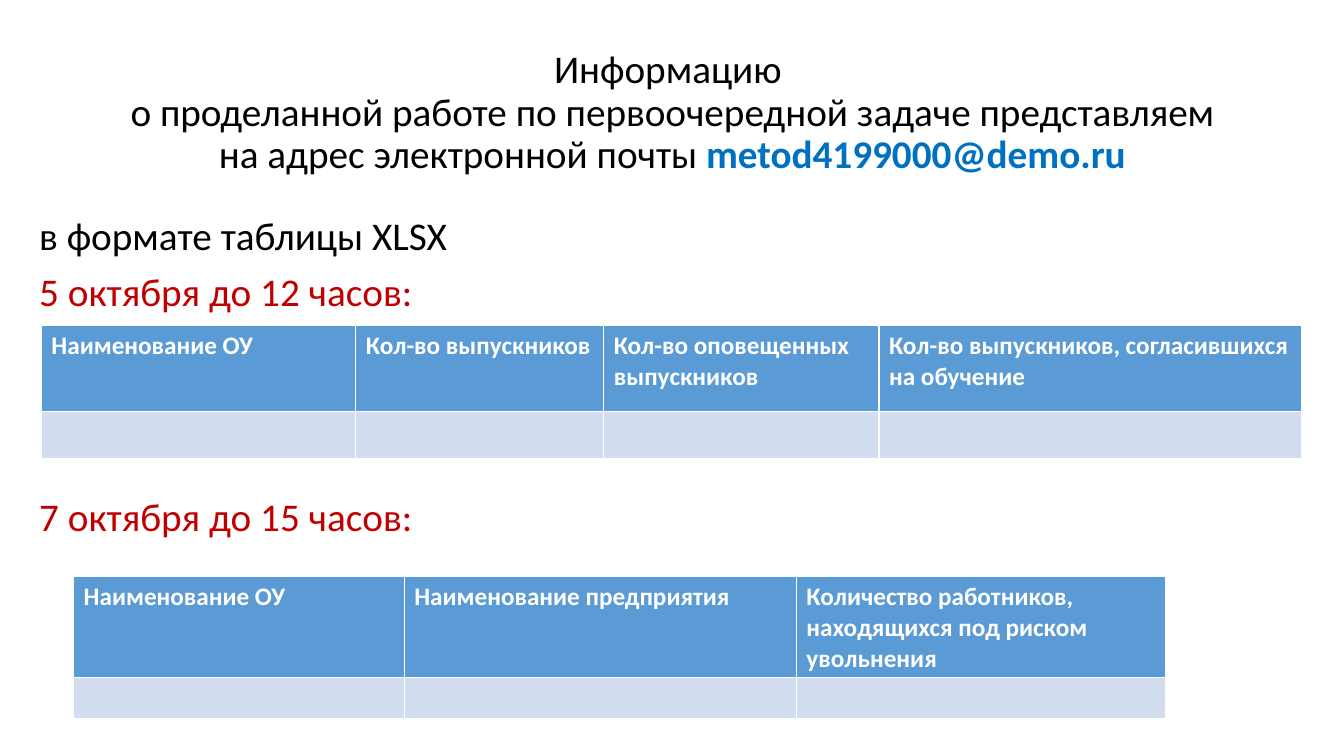
"""Build the slide on where and when to send the survey tables."""
from pptx import Presentation
from pptx.dml.color import RGBColor
from pptx.enum.text import MSO_ANCHOR, MSO_AUTO_SIZE, PP_ALIGN
from pptx.util import Inches, Pt

BLACK = RGBColor(0x00, 0x00, 0x00)
WHITE = RGBColor(0xFF, 0xFF, 0xFF)
RED = RGBColor(0xC0, 0x00, 0x00)
LINK_BLUE = RGBColor(0x00, 0x70, 0xC0)
HEADER_BLUE = RGBColor(0x5B, 0x9B, 0xD5)
ROW_BLUE = RGBColor(0xD2, 0xDE, 0xEF)

deck = Presentation()
deck.slide_width = Inches(13.33)
deck.slide_height = Inches(7.5)
COL = deck.slide_width / 100
ROW = deck.slide_height / 100


def place(left, top, width, height):
    """Turn percentages of the slide into lengths."""
    return int(left * COL), int(top * ROW), int(width * COL), int(height * ROW)


def write(paragraph, text, size=28, color=BLACK, bold=False):
    """Add a formatted run to a paragraph."""
    run = paragraph.add_run()
    run.text = text
    run.font.name = "Calibri"
    run.font.size = Pt(size)
    run.font.bold = bold
    run.font.color.rgb = color


slide = deck.slides.add_slide(deck.slide_layouts[5])

title = slide.shapes.title
title.left, title.top, title.width, title.height = place(6.9, 5.33, 86.25, 19.33)
title.text_frame.auto_size = MSO_AUTO_SIZE.NONE
title.text_frame.vertical_anchor = MSO_ANCHOR.MIDDLE
heading = title.text_frame.paragraphs[0]
heading.alignment = PP_ALIGN.CENTER
heading.line_spacing = 0.9
for line in ("Информацию ", "о проделанной работе по первоочередной задаче представляем"):
    write(heading, line)
    heading.add_line_break()
write(heading, "на адрес электронной почты ")
write(heading, "metod4199000@demo.ru", color=LINK_BLUE, bold=True)

deadlines = [
    (28, 14, [("в формате таблицы XLSX", BLACK), ("5 октября до 12 часов:", RED)]),
    (65.2, 7, [("7 октября до 15 часов:", RED)]),
]
for top, height, lines in deadlines:
    frame = slide.shapes.add_textbox(*place(2.18, top, 88.8, height)).text_frame
    frame.word_wrap = True
    for index, (line, color) in enumerate(lines):
        paragraph = frame.add_paragraph() if index else frame.paragraphs[0]
        paragraph.line_spacing = 0.9
        paragraph.space_before = Pt(10 if index else 0)
        write(paragraph, line, color=color)

surveys = [
    (3.08, 43.07, (11.33, 6.27), [
        ("Наименование ОУ", 23.4),
        ("Кол-во выпускников", 18.45),
        ("Кол-во оповещенных выпускников", 20.48),
        ("Кол-во выпускников, согласившихся на обучение", 31.43),
    ]),
    (5.48, 76.27, (13.33, 5.47), [
        ("Наименование ОУ", 24.6),
        ("Наименование предприятия", 29.18),
        ("Количество работников, находящихся под риском увольнения", 27.45),
    ]),
]
for left, top, heights, columns in surveys:
    total_width = sum(width for _, width in columns)
    survey = slide.shapes.add_table(
        2, len(columns), *place(left, top, total_width, sum(heights))).table
    for row, height in zip(survey.rows, heights):
        row.height = int(height * ROW)
    for index, (label, width) in enumerate(columns):
        survey.columns[index].width = int(width * COL)
        write(survey.cell(0, index).text_frame.paragraphs[0], label,
              size=18, color=WHITE, bold=True)
        for row_index, color in enumerate((HEADER_BLUE, ROW_BLUE)):
            fill = survey.cell(row_index, index).fill
            fill.solid()
            fill.fore_color.rgb = color

deck.save("out.pptx")
